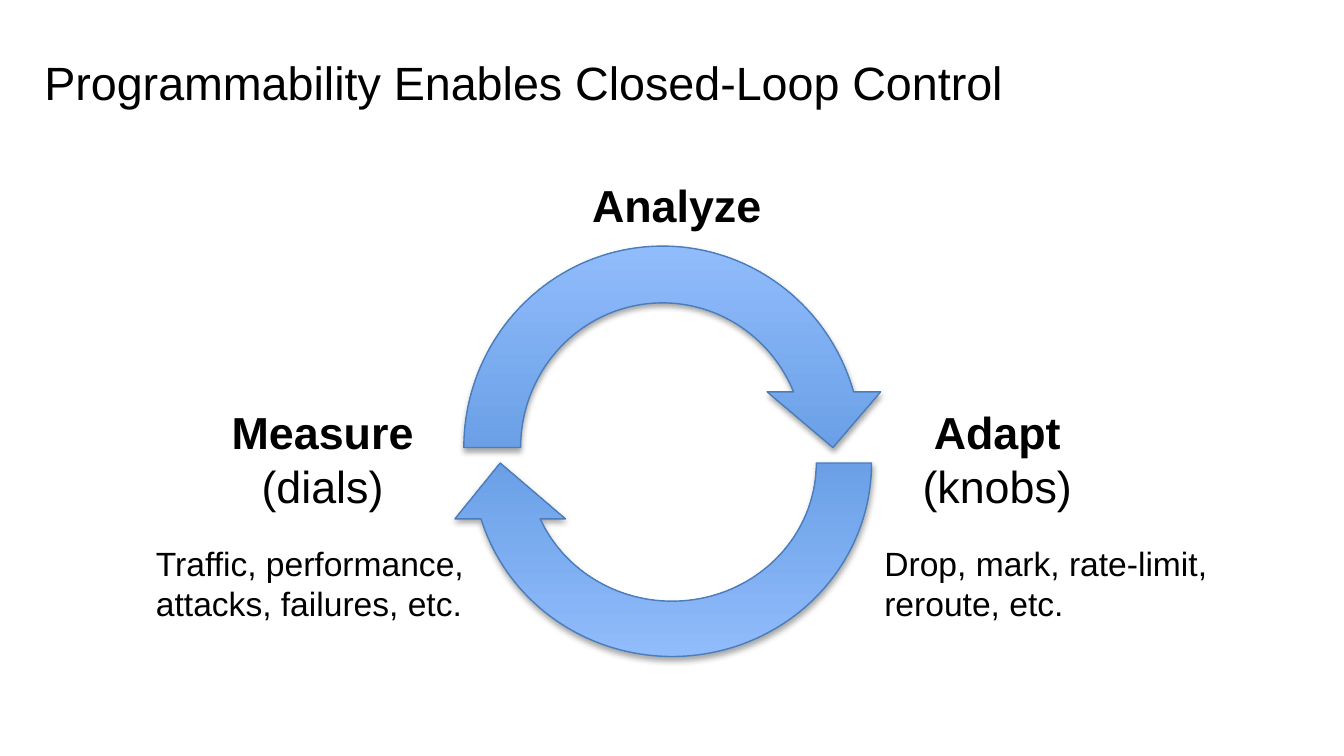
import pptx
import pptx.dml.color
import pptx.enum.shapes
import pptx.enum.text
import pptx.util
from lxml import etree
from pptx.util import Inches

DRAWING_NS = "http://schemas.openxmlformats.org/drawingml/2006/main"
SHADOW = (
    f'<a:outerShdw xmlns:a="{DRAWING_NS}" blurRad="40000" dist="23000" '
    'dir="5400000" rotWithShape="0"><a:srgbClr val="000000">'
    '<a:alpha val="35000"/></a:srgbClr></a:outerShdw>'
)


def rgb(value):
    return pptx.dml.color.RGBColor.from_string(value)


class LoopSlide:
    font = "Arial"
    ink = "000000"
    arrow_dark, arrow_light, arrow_edge = "3E7FCD", "96C0FF", "4A7DBA"

    def __init__(self, presentation):
        self.slide = presentation.slides.add_slide(presentation.slide_layouts[5])

    def format_run(self, run, size, bold=False):
        run.font.name = self.font
        run.font.size = pptx.util.Pt(size)
        run.font.bold = bold
        run.font.color.rgb = rgb(self.ink)

    def set_margins(self, frame):
        frame.word_wrap = True
        frame.margin_left = frame.margin_right = Inches(0.07)
        frame.margin_top = frame.margin_bottom = Inches(0.04)

    def title(self, text, left, top, width, height):
        heading = self.slide.shapes.title
        heading.left, heading.top = Inches(left), Inches(top)
        heading.width, heading.height = Inches(width), Inches(height)
        frame = heading.text_frame
        frame.text = text
        self.set_margins(frame)
        frame.auto_size = pptx.enum.text.MSO_AUTO_SIZE.NONE
        frame.vertical_anchor = pptx.enum.text.MSO_ANCHOR.MIDDLE
        frame.paragraphs[0].alignment = pptx.enum.text.PP_ALIGN.LEFT
        self.format_run(frame.paragraphs[0].runs[0], 25)

    def text(self, text, left, top, width, height, size, centred=False):
        """Centred text is a stage label: its first line is bold."""
        box = self.slide.shapes.add_textbox(
            Inches(left), Inches(top), Inches(width), Inches(height))
        frame = box.text_frame
        self.set_margins(frame)
        frame.auto_size = pptx.enum.text.MSO_AUTO_SIZE.SHAPE_TO_FIT_TEXT
        paragraph = frame.paragraphs[0]
        paragraph.text = text
        align = pptx.enum.text.PP_ALIGN
        paragraph.alignment = align.CENTER if centred else align.LEFT
        for index, run in enumerate(paragraph.runs):
            self.format_run(run, size, bold=centred and index == 0)

    def loop_arrow(self, left, top, width, height, rotation=0):
        arrow = self.slide.shapes.add_shape(
            pptx.enum.shapes.MSO_SHAPE.CIRCULAR_ARROW,
            Inches(left), Inches(top), Inches(width), Inches(height))
        arrow.rotation = rotation
        arrow.fill.gradient()
        arrow.fill.gradient_angle = 90
        shades = (self.arrow_dark, self.arrow_light)
        for stop, position, shade in zip(arrow.fill.gradient_stops, (0, 1), shades):
            stop.position = position
            stop.color.rgb = rgb(shade)
        arrow.line.color.rgb = rgb(self.arrow_edge)
        arrow.line.width = pptx.util.Pt(0.75)
        arrow.shadow.inherit = False
        effects = arrow.element.spPr.find(f"{{{DRAWING_NS}}}effectLst")
        effects.append(etree.fromstring(SHADOW))


def main():
    # Widescreen page, 16:9
    presentation = pptx.Presentation()
    presentation.slide_width = Inches(10)
    presentation.slide_height = presentation.slide_width * 9 // 16
    loop = LoopSlide(presentation)

    loop.title("Programmability Enables Closed-Loop Control", 0.26, 0.37, 8, 0.47)

    # Closed loop: upper and lower half
    loop.loop_arrow(3.24, 1.62, 3.38, 3.42)
    loop.loop_arrow(3.31, 1.8, 3.38, 3.29, rotation=180)

    # Stage labels
    for label, left, top, width, height in (
        ("Measure\v(dials)", 1.63, 2.97, 1.54, 0.88),
        ("Adapt\v(knobs)", 6.77, 2.97, 1.3, 0.88),
        ("Analyze", 4.31, 1.28, 1.45, 0.48),
    ):
        loop.text(label, left, top, width, height, 24, centred=True)

    # Examples under the outer stages
    for examples, left in (
        ("Traffic, performance, attacks, failures, etc.", 1.09),
        ("Drop, mark, rate-limit, reroute, etc.", 6.51),
    ):
        loop.text(examples, left, 4, 2.58, 0.68, 18)

    presentation.save("out.pptx")


if __name__ == "__main__":
    main()
